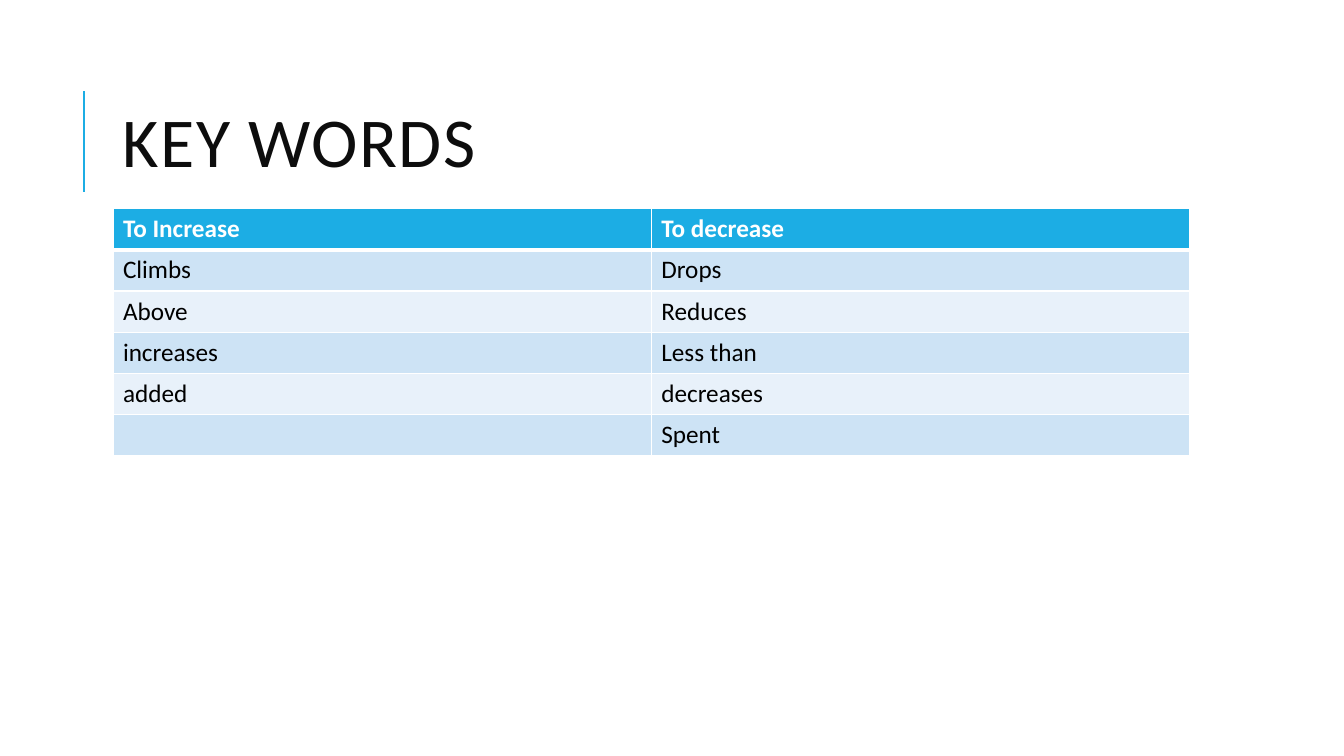
from pptx import Presentation
from pptx.dml.color import RGBColor
from pptx.enum.shapes import MSO_CONNECTOR
from pptx.enum.text import MSO_ANCHOR
from pptx.oxml.ns import qn
from pptx.util import Inches, Pt
from lxml import etree

STRAIGHT = MSO_CONNECTOR.STRAIGHT
MIDDLE = MSO_ANCHOR.MIDDLE
FONT = "Calibri"
ACCENT, WHITE, BLACK, TITLE_INK = "1CADE4", "FFFFFF", "000000", "0D0D0D"
BANDS = ("CDE3F5", "E8F1FA")
KEY_WORDS = [
    ("To Increase", "To decrease"),
    ("Climbs", "Drops"),
    ("Above", "Reduces"),
    ("increases", "Less than"),
    ("added", "decreases"),
    ("", "Spent"),
]


def color(hex_value):
    """Turn a hex string into a colour."""
    return RGBColor.from_string(hex_value)


def style_text(paragraph, size, ink, bold=False):
    """Format every run of a paragraph."""
    for run in paragraph.runs:
        run.font.name = FONT
        run.font.size = Pt(size)
        run.font.bold = bold
        run.font.color.rgb = color(ink)


def set_border(cell, side, points):
    """Draw one white border of a cell."""
    border = etree.SubElement(cell._tc.get_or_add_tcPr(), qn(f"a:{side}"), w=str(Pt(points)))
    fill = etree.SubElement(border, qn("a:solidFill"))
    etree.SubElement(fill, qn("a:srgbClr"), val=WHITE)


def add_title(slide, left, top, width, height):
    """Place the heading and the accent rule to its left."""
    rule_x, rule_top = left - 0.29, top + 0.26
    rule = slide.shapes.add_connector(
        STRAIGHT, Inches(rule_x), Inches(rule_top + 1), Inches(rule_x), Inches(rule_top))
    rule.line.color.rgb = color(ACCENT)
    rule.line.width = Pt(1.5)
    etree.SubElement(rule._element.spPr, qn("a:effectLst"))

    heading = slide.shapes.add_textbox(Inches(left), Inches(top), Inches(width), Inches(height))
    frame = heading.text_frame
    frame.word_wrap = True
    frame.vertical_anchor = MIDDLE
    frame.text = "KEY WORDS"
    paragraph = frame.paragraphs[0]
    paragraph.line_spacing = 0.8
    style_text(paragraph, 50, TITLE_INK)
    paragraph.runs[0].font._element.set("spc", "100")


def add_key_words(slide, left, top, width, height):
    """Place the two-column table of key words."""
    table = slide.shapes.add_table(
        len(KEY_WORDS), len(KEY_WORDS[0]),
        Inches(left), Inches(top), Inches(width), Inches(height)).table
    for row, words in enumerate(KEY_WORDS):
        is_header = row == 0
        for column, word in enumerate(words):
            cell = table.cell(row, column)
            set_border(cell, "lnL", 1)
            set_border(cell, "lnR", 1)
            set_border(cell, "lnT", 3 if row == 1 else 1)
            set_border(cell, "lnB", 3 if is_header else 1)
            cell.fill.solid()
            cell.fill.fore_color.rgb = color(ACCENT if is_header else BANDS[(row - 1) % 2])
            cell.text_frame.text = word
            style_text(cell.text_frame.paragraphs[0], 18, WHITE if is_header else BLACK, is_header)


def main():
    """Build and save the slide."""
    deck = Presentation()
    deck.slide_width, deck.slide_height = Inches(13.33), Inches(7.5)
    slide = deck.slides.add_slide(deck.slide_layouts[6])
    add_title(slide, 1.12, 0.64, 10.63, 1.64)
    add_key_words(slide, 1.12, 2.07, 10.68, 2.45)
    deck.save("out.pptx")


if __name__ == "__main__":
    main()
